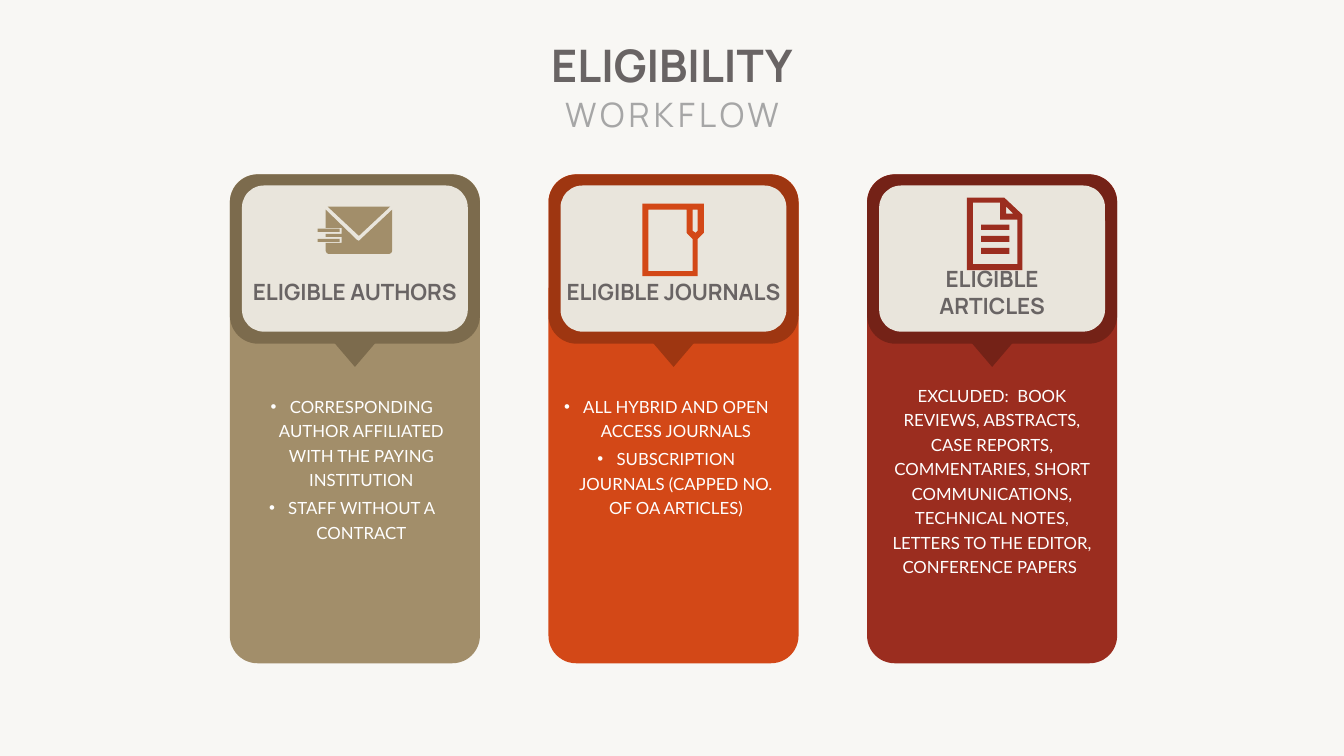
from dataclasses import dataclass

from lxml.etree import SubElement
from pptx import Presentation
from pptx.dml.color import RGBColor
from pptx.enum.shapes import MSO_SHAPE as Preset
from pptx.enum.text import MSO_ANCHOR as Anchor, PP_ALIGN as Align
from pptx.oxml.ns import qn
from pptx.util import Inches, Pt


@dataclass(frozen=True)
class Theme:
    background: str = "F8F7F4"
    panel: str = "E9E5DC"
    heading: str = "696464"
    subtitle: str = "A6A6A6"
    body: str = "FFFFFF"
    heading_font: str = "Manrope"
    body_font: str = "Lato"
    title_size: float = 32
    subtitle_size: float = 24
    label_size: float = 16
    body_size: float = 12
    body_line: float = 17.5
    body_gap: float = 2.4


THEME = Theme()
SLIDE_WIDTH, SLIDE_HEIGHT = 13.33, 7.5
CARD_LEFT, CARD_TOP, CARD_PITCH = 2.28, 1.73, 3.16
CARD_WIDTH, CARD_HEIGHT, HEADER_HEIGHT = 2.48, 4.85, 1.68
PANEL_INSET, PANEL_WIDTH, PANEL_HEIGHT = 0.12, 2.24, 1.45
POINTER_WIDTH, POINTER_HEIGHT = 0.41, 0.24


def box(left, top, right, bottom):
    return [(left, top), (right, top), (right, bottom), (left, bottom)]


# Icon outlines in hundredths of an inch; nested outlines cut holes.
ENVELOPE = [
    box(0, 32, 22, 35),
    box(0, 22, 22, 25),
    [(8, 3), (39, 33), (41, 34), (42, 33), (74, 3), (74, 44), (73, 46),
     (71, 47), (11, 47), (9, 46), (8, 44), (8, 36), (24, 36), (24, 30),
     (8, 30), (8, 27), (24, 27), (24, 21), (8, 21)],
    [(10, 0), (72, 0), (41, 29)],
]
JOURNAL = [
    [(50, 6), (55, 6), (55, 27), (53, 29), (50, 27)],
    [(6, 6), (44, 6), (44, 29), (45, 30), (50, 35), (50, 67), (6, 67)],
    [(0, 0), (61, 0), (61, 29), (60, 30), (55, 35), (55, 72), (0, 72)],
]
ARTICLE = [
    *(box(14, top, 42, top + 5.5) for top in (27, 38.5, 50)),
    [(39, 9), (46, 16), (39, 16)],
    [(6, 5), (33, 5), (33, 22), (50, 22), (50, 66), (6, 66)],
    [(0, 0), (37, 0), (38, 1), (55, 17), (55, 72), (0, 72)],
]


@dataclass(frozen=True)
class Card:
    """Offsets of icon and body are measured from the card's top left corner."""
    label: str
    color: str
    dark: str
    icon: list
    icon_at: tuple
    body: tuple
    body_at: tuple
    body_height: float
    bulleted: bool = True
    label_margin: float = 0.05


CARDS = [
    Card("ELIGIBLE AUTHORS", "A28E6A", "7C6B4D", ENVELOPE, (0.87, 0.32),
         ("CORRESPONDING AUTHOR AFFILIATED WITH THE PAYING INSTITUTION",
          "STAFF WITHOUT A CONTRACT"), (0.09, 2.13), 1.58),
    Card("ELIGIBLE JOURNALS", "D34817", "9E3611", JOURNAL, (0.93, 0.29),
         ("ALL HYBRID AND OPEN ACCESS JOURNALS",
          "SUBSCRIPTION JOURNALS (CAPPED NO. OF OA ARTICLES)"),
         (0.05, 2.13), 1.62),
    Card("ELIGIBLE ARTICLES", "9B2D1F", "742217", ARTICLE, (0.99, 0.23),
         ("EXCLUDED:  BOOK REVIEWS, ABSTRACTS, CASE REPORTS, COMMENTARIES, "
          "SHORT COMMUNICATIONS, TECHNICAL NOTES, LETTERS TO THE EDITOR, "
          "CONFERENCE PAPERS ",), (0.12, 2.02), 2.04,
         bulleted=False, label_margin=0.4),
]


def paint(shape, color):
    shape.shadow.inherit = False
    shape.fill.solid()
    shape.fill.fore_color.rgb = RGBColor.from_string(color)
    shape.line.fill.background()


def add_preset(slide, preset, left, top, width, height, color, corner=None):
    shape = slide.shapes.add_shape(
        preset, Inches(left), Inches(top), Inches(width), Inches(height))
    paint(shape, color)
    if corner is not None:
        shape.adjustments[0] = corner
    return shape


def add_icon(slide, outlines, left, top, color):
    first, *others = outlines
    builder = slide.shapes.build_freeform(*first[0], scale=Inches(0.01))
    builder.add_line_segments(first[1:])
    for outline in others:
        builder.move_to(*outline[0])
        builder.add_line_segments(outline[1:])
    paint(builder.convert_to_shape(Inches(left), Inches(top)), color)


def add_frame(slide, left, top, width, height, margin_x, margin_y,
              anchor=Anchor.TOP):
    text_box = slide.shapes.add_textbox(
        Inches(left), Inches(top), Inches(width), Inches(height))
    frame = text_box.text_frame
    frame.word_wrap = True
    frame.vertical_anchor = anchor
    frame.margin_left = frame.margin_right = Inches(margin_x)
    frame.margin_top = frame.margin_bottom = Inches(margin_y)
    return frame


def write(paragraph, text, font, size, color, bold=False, tracking=0):
    """Add one centred run; tracking is the letter spacing in points."""
    paragraph.alignment = Align.CENTER
    run = paragraph.add_run()
    run.text = text
    run.font.name = font
    run.font.size = Pt(size)
    run.font.bold = bold
    run.font.color.rgb = RGBColor.from_string(color)
    if tracking:
        run.font._element.set("spc", str(tracking * 100))


def add_bullet(paragraph):
    properties = paragraph._p.get_or_add_pPr()
    properties.set("marL", str(Inches(0.19)))
    properties.set("indent", str(-Inches(0.19)))
    SubElement(properties, qn("a:buFont")).set("typeface", "Arial")
    SubElement(properties, qn("a:buChar")).set("char", "•")


def add_heading(slide):
    width = SLIDE_WIDTH / 4
    left = (SLIDE_WIDTH - width) / 2
    title = add_frame(slide, left, 0.33, width, 0.64, 0.1, 0.05)
    write(title.paragraphs[0], "ELIGIBILITY", THEME.heading_font,
          THEME.title_size, THEME.heading, bold=True)
    subtitle = add_frame(slide, left, 0.88, width, 0.5, 0.1, 0.05)
    write(subtitle.paragraphs[0], "WORKFLOW", THEME.heading_font,
          THEME.subtitle_size, THEME.subtitle, tracking=3)


def add_body(slide, card, left):
    offset_x, offset_y = card.body_at
    frame = add_frame(slide, left + offset_x, CARD_TOP + offset_y,
                      PANEL_WIDTH, card.body_height, 0.05, 0.03)
    for index, text in enumerate(card.body):
        paragraph = frame.add_paragraph() if index else frame.paragraphs[0]
        paragraph.line_spacing = Pt(THEME.body_line)
        paragraph.space_before = Pt(THEME.body_gap)
        if card.bulleted:
            add_bullet(paragraph)
        write(paragraph, text, THEME.body_font, THEME.body_size, THEME.body)


def add_card(slide, card, column):
    left = CARD_LEFT + column * CARD_PITCH
    rounded = Preset.ROUNDED_RECTANGLE
    add_preset(slide, rounded, left, CARD_TOP, CARD_WIDTH, CARD_HEIGHT,
               card.color, 0.11)
    add_preset(slide, rounded, left, CARD_TOP, CARD_WIDTH, HEADER_HEIGHT,
               card.dark)
    add_preset(slide, rounded, left + PANEL_INSET, CARD_TOP + 0.11,
               PANEL_WIDTH, PANEL_HEIGHT, THEME.panel, 0.15)
    pointer = add_preset(
        slide, Preset.ISOSCELES_TRIANGLE,
        left + (CARD_WIDTH - POINTER_WIDTH) / 2, CARD_TOP + HEADER_HEIGHT - 0.01,
        POINTER_WIDTH, POINTER_HEIGHT, card.dark)
    pointer.rotation = 180
    add_icon(slide, card.icon, left + card.icon_at[0],
             CARD_TOP + card.icon_at[1], card.color)
    label = add_frame(slide, left + PANEL_INSET, CARD_TOP + 0.98, PANEL_WIDTH,
                      0.37, card.label_margin, 0.05, Anchor.MIDDLE)
    write(label.paragraphs[0], card.label, THEME.heading_font,
          THEME.label_size, THEME.heading, bold=True)
    add_body(slide, card, left)


def main():
    presentation = Presentation()
    presentation.slide_width = Inches(SLIDE_WIDTH)
    presentation.slide_height = Inches(SLIDE_HEIGHT)
    slide = presentation.slides.add_slide(presentation.slide_layouts[6])
    slide.background.fill.solid()
    slide.background.fill.fore_color.rgb = RGBColor.from_string(THEME.background)
    add_heading(slide)
    for column, card in enumerate(CARDS):
        add_card(slide, card, column)
    presentation.save("out.pptx")


if __name__ == "__main__":
    main()
